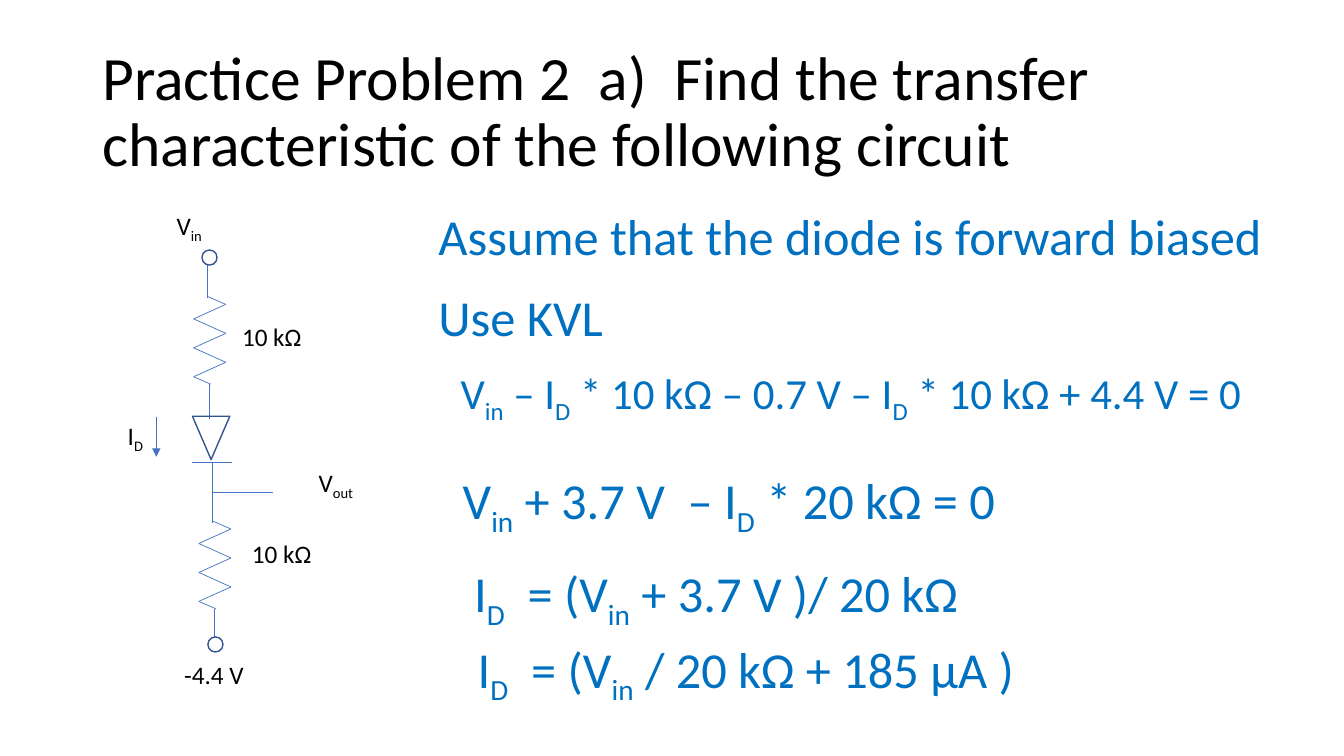
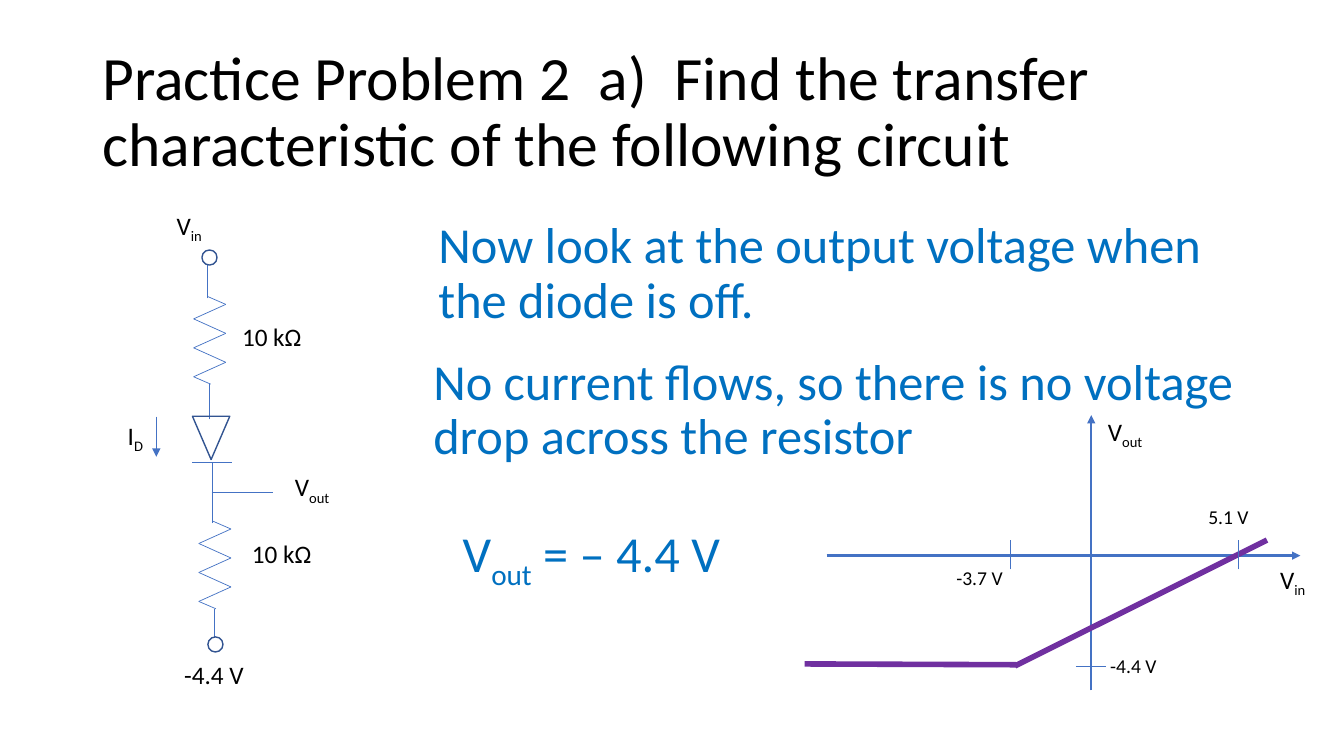
from itertools import pairwise

from lxml.etree import SubElement
from pptx import Presentation
from pptx.dml.color import RGBColor
from pptx.enum.shapes import MSO_CONNECTOR, MSO_SHAPE
from pptx.enum.text import MSO_ANCHOR
from pptx.oxml.ns import qn
from pptx.util import Cm, Pt

FONT = "Calibri"
BLACK = "000000"
ANSWER_BLUE = "0070C0"
WIRE_BLUE = "4472C4"
OUTLINE_BLUE = "325491"
CURVE_PURPLE = "7030A0"
WHITE = "FFFFFF"

TITLE = "Practice Problem 2  a)  Find the transfer characteristic of the following circuit"
ANSWER_WIDTH = 21.31
LINE_HEIGHT, TWO_LINE_HEIGHT = 2.16, 3.94
LABEL_HEIGHT = 1.02


def add_text(slide, box, pieces, size, color=BLACK, anchor=MSO_ANCHOR.TOP, spacing=1.0):
    """Add a text box; every second piece of text is a subscript."""
    frame = slide.shapes.add_textbox(*map(Cm, box)).text_frame
    frame.word_wrap = True
    frame.vertical_anchor = anchor
    paragraph = frame.paragraphs[0]
    paragraph.line_spacing = spacing
    for index, piece in enumerate(pieces):
        run = paragraph.add_run()
        run.text = piece
        run.font.name = FONT
        run.font.size = Pt(size)
        run.font.color.rgb = RGBColor.from_string(color)
        if index % 2:
            run.font._element.set("baseline", "-25000")


def add_line(slide, ends, color=WIRE_BLUE, width=0.5, arrow=False):
    connector = slide.shapes.add_connector(MSO_CONNECTOR.STRAIGHT, *map(Cm, ends))
    connector.line.color.rgb = RGBColor.from_string(color)
    connector.line.width = Pt(width)
    properties = connector.element.spPr
    if arrow:
        SubElement(properties.find(qn("a:ln")), qn("a:tailEnd"), type="triangle")
    SubElement(properties, qn("a:effectLst"))


presentation = Presentation()
presentation.slide_width = Cm(33.87)
presentation.slide_height = Cm(19.05)
blank_layout = presentation.slide_layouts[6]

# Circuit: wires as x1, y1, x2, y2
wires = [
    (5.33, 12.4, 6.87, 12.4),
    (5.84, 11.64, 4.83, 11.64),
    (5.23, 7.52, 5.23, 6.58),
    (5.28, 10.57, 5.28, 9.68),
    (5.36, 13.18, 5.36, 11.64),
    (5.41, 16.23, 5.41, 15.34),
]
resistor_starts = [(5.23, 7.47), (5.36, 13.13)]
zigzag = [(0, 0)]
zigzag += [(0.46 if tooth % 2 == 0 else -0.35, 0.2 + 0.365 * tooth) for tooth in range(6)]
zigzag.append((0.08, 2.21))
circuit_shapes = [
    (MSO_SHAPE.ISOSCELES_TRIANGLE, (4.85, 10.49, 0.94, 1.09), 180),
    (MSO_SHAPE.OVAL, (5.09, 6.3, 0.38, 0.38), 0),
    (MSO_SHAPE.OVAL, (5.24, 16.05, 0.38, 0.38), 0),
]
circuit_labels = [
    (4.2, 5.17, 3, ["V", "in"]),
    (2.97, 10.46, 1.8, ["I", "D"]),
    (5.85, 7.98, 3, ["10 kΩ"]),
    (6.1, 13.44, 3, ["10 kΩ"]),
    (4.39, 16.48, 3, ["-4.4 V"]),
]

# Answers: left, top, height, size, line spacing, pieces
forward_answers = [
    (10.8, 4.95, LINE_HEIGHT, 36, 0.9, ["Assume that the diode is forward biased"]),
    (10.8, 6.98, LINE_HEIGHT, 36, 0.9, ["Use KVL"]),
    (11.36, 8.89, LINE_HEIGHT, 30.6, 0.8,
     ["V", "in", " – I", "D", " * 10 kΩ – 0.7 V – I", "D", " * 10 kΩ + 4.4 V = 0"]),
    (11.41, 11.55, LINE_HEIGHT, 36, 0.9,
     ["V", "in", " + 3.7 V  – I", "D", " * 20 kΩ = 0"]),
    (11.7, 13.89, LINE_HEIGHT, 36, 0.9,
     ["I", "D", "  = (V", "in", " + 3.7 V )/ 20 kΩ"]),
    (11.79, 15.79, LINE_HEIGHT, 36, 0.9,
     ["I", "D", "  = (V", "in", " / 20 kΩ + 185 μA )"]),
]
off_answers = [
    (10.8, 4.95, TWO_LINE_HEIGHT, 36, 0.9,
     ["Now look at the output voltage when the diode is off."]),
    (11.41, 12.88, LINE_HEIGHT, 36, 0.9, ["V", "out", " = – 4.4 V"]),
    (10.67, 8.39, TWO_LINE_HEIGHT, 36, 0.9,
     ["No current flows, so there is no voltage drop across the resistor"]),
]

for answers, output_left, output_top in [
    (forward_answers, 7.78, 11.64),
    (off_answers, 7.18, 11.76),
]:
    slide = presentation.slides.add_slide(blank_layout)
    add_text(slide, (2.33, 1.02, 29.21, 3.68), [TITLE], 44,
             anchor=MSO_ANCHOR.MIDDLE, spacing=0.9)

    for wire in wires:
        add_line(slide, wire)
    add_line(slide, (3.94, 10.5, 3.94, 11.51), arrow=True)

    for left, top in resistor_starts:
        for (x1, y1), (x2, y2) in pairwise(zigzag):
            add_line(slide, (left + x1, top + y1, left + x2, top + y2))

    for kind, box, rotation in circuit_shapes:
        shape = slide.shapes.add_shape(kind, *map(Cm, box))
        shape.rotation = rotation
        shape.shadow.inherit = False
        if kind == MSO_SHAPE.OVAL:
            shape.fill.solid()
            shape.fill.fore_color.rgb = RGBColor.from_string(WHITE)
        else:
            shape.fill.background()
        shape.line.color.rgb = RGBColor.from_string(OUTLINE_BLUE)
        shape.line.width = Pt(1)

    output_label = (output_left, output_top, 2.72, ["V", "out"])
    for left, top, width, pieces in circuit_labels + [output_label]:
        add_text(slide, (left, top, width, LABEL_HEIGHT), pieces, 18)

    for left, top, height, size, spacing, pieces in answers:
        add_text(slide, (left, top, ANSWER_WIDTH, height), pieces, size,
                 ANSWER_BLUE, MSO_ANCHOR.MIDDLE, spacing)

# Transfer characteristic on the last slide
for axis in [(20.83, 14, 32.77, 14), (27.5, 17.4, 27.5, 10.46)]:
    add_line(slide, axis, width=1.75, arrow=True)
for segment in [(20.28, 16.73, 25.6, 16.75), (25.58, 16.78, 31.93, 13.61)]:
    add_line(slide, segment, CURVE_PURPLE, 4)
for tick in [
    (25.47, 14.35, 25.47, 13.61),
    (31.2, 14.35, 31.2, 13.61),
    (27.11, 16.79, 27.86, 16.79),
]:
    add_line(slide, tick)
for left, top, size, pieces in [
    (27.67, 10.36, 18, ["V", "out"]),
    (32.01, 14.1, 18, ["V", "in"]),
    (23.85, 14.14, 14, ["-3.7 V"]),
    (30.2, 12.6, 14, ["5.1 V"]),
    (27.73, 16.36, 14, ["-4.4 V"]),
]:
    add_text(slide, (left, top, 1.8, LABEL_HEIGHT), pieces, size)

presentation.save("out.pptx")
